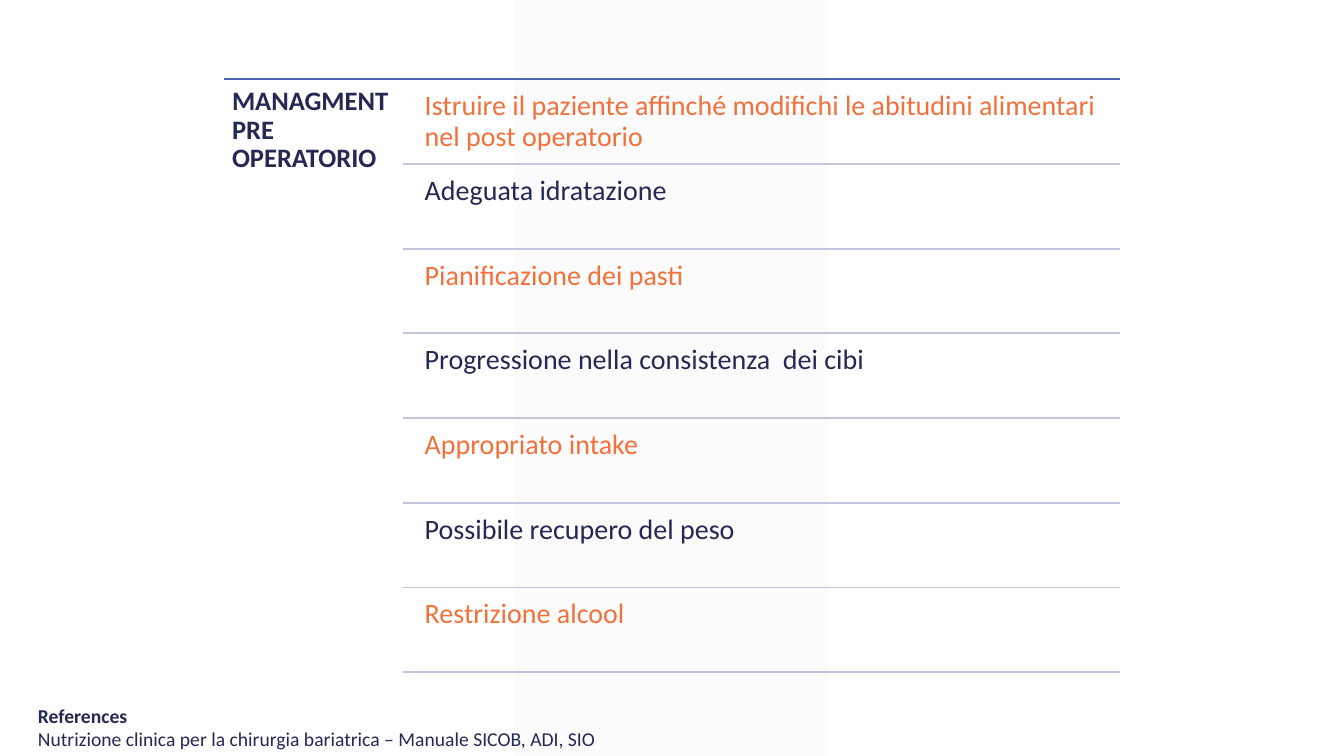
from lxml import etree
from pptx import Presentation
from pptx.dml.color import RGBColor
from pptx.enum.shapes import MSO_CONNECTOR as Connector, MSO_SHAPE as Shape
from pptx.oxml.ns import qn
from pptx.util import Pt

NAVY, ORANGE = "242852", "F3703A"
BLUE, PALE_BLUE, GRAY = "4A66AC", "C1C6DB", "F2F2F2"
HEADING = "MANAGMENT PRE OPERATORIO"
ADVICE = [
    "Istruire il paziente affinché modifichi le abitudini alimentari nel post operatorio",
    "Adeguata idratazione",
    "Pianificazione dei pasti",
    "Progressione nella consistenza  dei cibi",
    "Appropriato intake",
    "Possibile recupero del peso",
    "Restrizione alcool",
]
REFERENCES = [
    "References",
    "Nutrizione clinica per la chirurgia bariatrica – Manuale SICOB, ADI, SIO",
]


def color(hex_code):
    return RGBColor.from_string(hex_code)


def add_rule(page, left, right, top, hex_code):
    rule = page.shapes.add_connector(
        Connector.STRAIGHT, Pt(left), Pt(top), Pt(right), Pt(top))
    rule.line.color.rgb = color(hex_code)
    rule.line.width = Pt(1.25)
    etree.SubElement(rule._element.spPr, qn("a:effectLst"))


def add_text(page, left, top, width, height, lines, size, hex_code,
             bold_first=False, inset=None, spacing=None):
    box = page.shapes.add_textbox(Pt(left), Pt(top), Pt(width), Pt(height))
    frame = box.text_frame
    frame.word_wrap = True
    if inset is not None:
        frame.margin_left = frame.margin_right = Pt(inset)
        frame.margin_top = frame.margin_bottom = Pt(inset)
    frame.text = "\n".join(lines)
    for index, para in enumerate(frame.paragraphs):
        para.line_spacing = spacing
        para.font.name = "Calibri"
        para.font.size = Pt(size)
        para.font.bold = bold_first and index == 0
        para.font.color.rgb = color(hex_code)


def add_band(page, left, top, width, height):
    """Draw the translucent vertical band behind the text."""
    band = page.shapes.add_shape(
        Shape.PARALLELOGRAM, Pt(left), Pt(top), Pt(width), Pt(height))
    band.adjustments[0] = 0
    band.shadow.inherit = False
    band.line.fill.background()
    band.fill.solid()
    band.fill.fore_color.rgb = color(GRAY)
    fill_color = band._element.spPr.find(qn("a:solidFill"))[0]
    etree.SubElement(fill_color, qn("a:alpha"), val="30000")


def add_advice_list(page, left, top, width, height):
    """Place the heading in the left fifth and the ruled rows beside it."""
    right = left + width
    heading_width = width / 5
    rows_left = left + heading_width
    text_left = rows_left + 9.6
    pitch = height / len(ADVICE)
    gap = pitch / 20
    style = {"inset": 5.8, "spacing": 0.9}

    add_rule(page, left, right, top, BLUE)
    add_text(page, left, top, heading_width, height, [HEADING], 19, NAVY,
             bold_first=True, **style)
    for index, advice in enumerate(ADVICE):
        row_top = top + index * pitch
        add_text(page, text_left, row_top + gap, right - text_left, pitch - gap,
                 [advice], 20, NAVY if index % 2 else ORANGE, **style)
        add_rule(page, rows_left, right, row_top + pitch, PALE_BLUE)


def add_references(page, left, top, width, height):
    add_text(page, left, top, width, height, REFERENCES, 14, NAVY, bold_first=True)


def main():
    deck = Presentation()
    deck.slide_width, deck.slide_height = Pt(960), Pt(540)
    page = deck.slides.add_slide(deck.slide_layouts[6])
    add_band(page, 367.5, 0, 224.5, 540)
    add_advice_list(page, 160, 56.6, 640, 423.5)
    add_references(page, 20, 499, 510.5, 41)
    deck.save("out.pptx")


if __name__ == "__main__":
    main()
